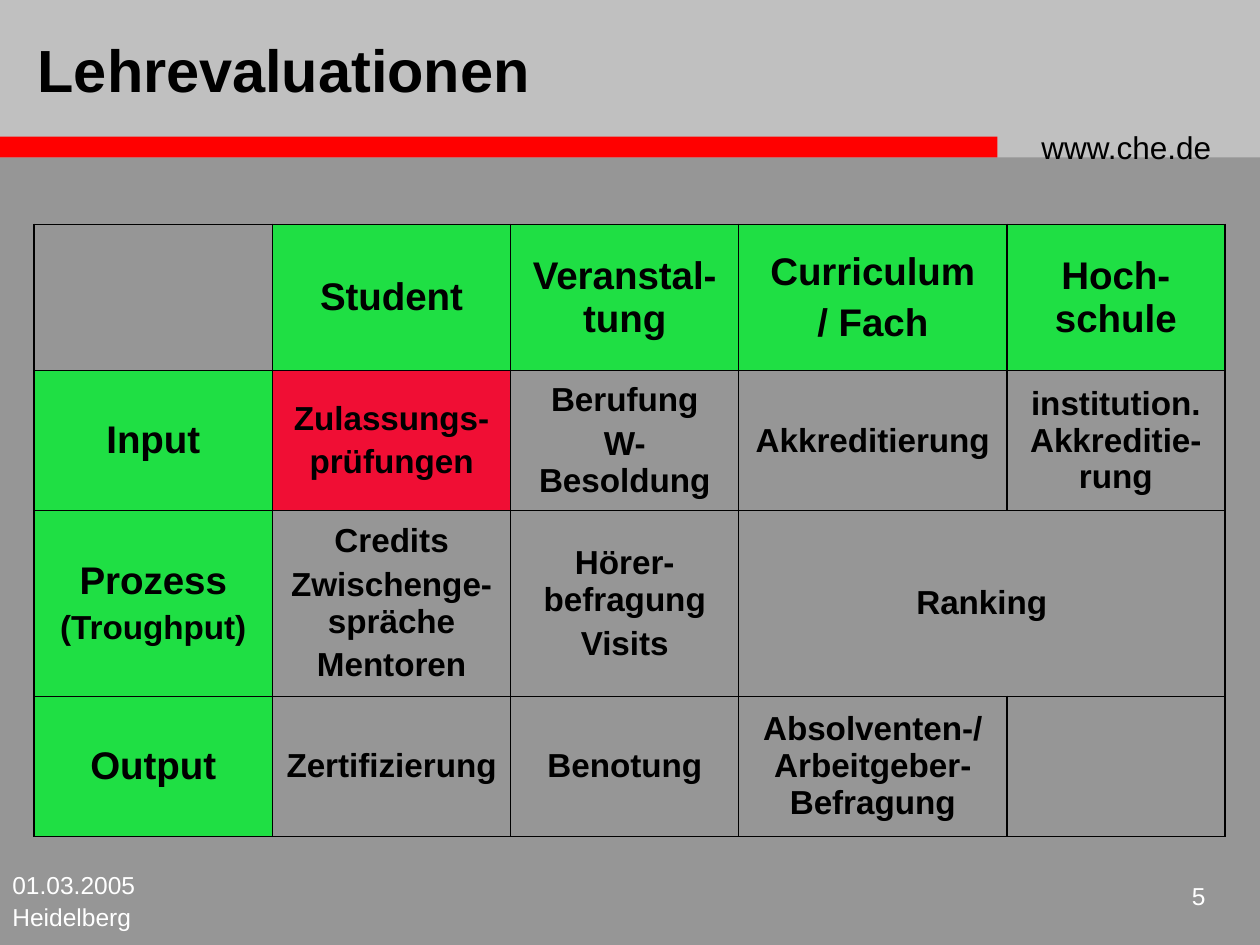
from dataclasses import dataclass
from typing import Optional

from lxml import etree
from pptx import Presentation
from pptx.dml.color import RGBColor
from pptx.enum.shapes import MSO_SHAPE
from pptx.enum.text import MSO_ANCHOR, PP_ALIGN
from pptx.oxml.ns import qn
from pptx.util import Pt

RECT = MSO_SHAPE.RECTANGLE
TOP, MIDDLE = MSO_ANCHOR.TOP, MSO_ANCHOR.MIDDLE
LEFT, CENTER, RIGHT = PP_ALIGN.LEFT, PP_ALIGN.CENTER, PP_ALIGN.RIGHT
BLACK = RGBColor(0x00, 0x00, 0x00)
WHITE = RGBColor(0xFF, 0xFF, 0xFF)
GRAY = RGBColor(0x96, 0x96, 0x96)
SILVER = RGBColor(0xC0, 0xC0, 0xC0)
RED = RGBColor(0xFF, 0x00, 0x00)
GREEN = RGBColor(0x1F, 0xDF, 0x44)
CRIMSON = RGBColor(0xF0, 0x0E, 0x34)
HEAD, BODY = 22, 19


@dataclass
class Bar:
    box: tuple
    fill: RGBColor


@dataclass
class Label:
    text: str
    box: tuple
    size: float
    color: RGBColor = BLACK
    bold: bool = False
    align: PP_ALIGN = LEFT
    anchor: MSO_ANCHOR = TOP
    spacing: float = 1.0


@dataclass
class Cell:
    lines: tuple = ()
    sizes: tuple = (BODY,)
    fill: Optional[RGBColor] = None
    span: int = 1


def head(*lines: str, sizes: tuple = (HEAD,)) -> Cell:
    """Return a green heading cell."""
    return Cell(lines, sizes, GREEN)


def body(*lines: str, **options) -> Cell:
    """Return a body cell."""
    return Cell(lines, **options)


BARS = [
    Bar((0, 0, 720, 90), SILVER),
    Bar((-0.5, 78, 570.5, 12), RED),
]
LABELS = [
    Label("www.che.de", (588, 67.5, 126, 29), 18, spacing=1.1),
    Label("01.03.2005 Heidelberg", (0, 492, 150, 36), 14, WHITE, spacing=1.1),
    Label("5", (654, 498, 42, 30), 14, WHITE, align=RIGHT, spacing=1.1),
    Label("Lehrevaluationen", (14.5, 0, 568, 78), 34, bold=True, anchor=MIDDLE),
]
ORIGIN = (19.5, 128.2)
COLUMNS = [136.2, 136.2, 130.3, 153.2, 124.6]
ROWS = [83.5, 80, 106.2, 80]
GRID = [
    [Cell(), head("Student"), head("Veranstal-tung"),
     head("Curriculum", "/ Fach"), head("Hoch-schule")],
    [head("Input"), body("Zulassungs-", "prüfungen", fill=CRIMSON),
     body("Berufung", "W-Besoldung"), body("Akkreditierung"),
     body("institution. Akkreditie-rung")],
    [head("Prozess", "(Troughput)", sizes=(HEAD, BODY)),
     body("Credits", "Zwischenge-spräche", "Mentoren"),
     body("Hörer-befragung", "Visits"), body("Ranking", span=2)],
    [head("Output"), body("Zertifizierung"), body("Benotung"),
     body("Absolventen-/Arbeitgeber-Befragung"), Cell()],
]


def add_run(p, text: str, size: float, color: RGBColor, bold: bool) -> None:
    """Add a formatted run to a paragraph."""
    r = p.add_run()
    r.text = text
    r.font.color.rgb = color
    for key, value in {"name": "Arial", "size": Pt(size), "bold": bold}.items():
        setattr(r.font, key, value)


def add_bar(s, bar: Bar) -> None:
    """Draw a plain filled band."""
    sp = s.shapes.add_shape(RECT, *map(Pt, bar.box))
    sp.shadow.inherit = False
    sp.fill.solid()
    sp.fill.fore_color.rgb = bar.fill
    sp.line.fill.background()


def add_label(s, label: Label) -> None:
    """Draw a single-paragraph text box."""
    tf = s.shapes.add_textbox(*map(Pt, label.box)).text_frame
    for key, value in {"word_wrap": True, "vertical_anchor": label.anchor}.items():
        setattr(tf, key, value)
    p = tf.paragraphs[0]
    for key, value in {"alignment": label.align, "line_spacing": label.spacing}.items():
        setattr(p, key, value)
    add_run(p, label.text, label.size, label.color, label.bold)


def set_borders(cell) -> None:
    """Give a cell thin black edges ahead of its fill."""
    props = cell._tc.get_or_add_tcPr()
    for i, side in enumerate(("lnL", "lnR", "lnT", "lnB")):
        ln = etree.Element(qn(f"a:{side}"), w=str(Pt(1)))
        fill = etree.SubElement(ln, qn("a:solidFill"))
        etree.SubElement(fill, qn("a:srgbClr"), val=str(BLACK))
        props.insert(i, ln)


def fill_cell(cell, data: Cell) -> None:
    """Write the text and fill of one table cell."""
    cell.vertical_anchor = MIDDLE
    if data.fill is None:
        cell.fill.background()
    else:
        cell.fill.solid()
        cell.fill.fore_color.rgb = data.fill
    tf = cell.text_frame
    for i, text in enumerate(data.lines):
        p = tf.add_paragraph() if i else tf.paragraphs[0]
        size = data.sizes[min(i, len(data.sizes) - 1)]
        p.alignment = CENTER
        if i:
            p.space_before = Pt(0.2 * size)
        add_run(p, text, size, BLACK, True)


def add_matrix(s) -> None:
    """Draw the evaluation table."""
    size = (sum(COLUMNS), sum(ROWS))
    table = s.shapes.add_table(len(ROWS), len(COLUMNS), *map(Pt, ORIGIN + size)).table
    for key in ("first_row", "horz_banding"):
        setattr(table, key, False)
    for column, width in zip(table.columns, COLUMNS):
        column.width = Pt(width)
    for row, height in zip(table.rows, ROWS):
        row.height = Pt(height)
    for i, row in enumerate(GRID):
        for j, data in enumerate(row):
            if data.span > 1:
                table.cell(i, j).merge(table.cell(i, j + data.span - 1))
            fill_cell(table.cell(i, j), data)
    for cell in table.iter_cells():
        if cell.is_spanned:
            cell.fill.background()
        set_borders(cell)


def main() -> None:
    """Build and save the slide."""
    prs = Presentation()
    prs.slide_width, prs.slide_height = Pt(720), Pt(540)
    s = prs.slides.add_slide(prs.slide_layouts[6])
    s.background.fill.solid()
    s.background.fill.fore_color.rgb = GRAY
    for bar in BARS:
        add_bar(s, bar)
    for label in LABELS:
        add_label(s, label)
    add_matrix(s)
    prs.save("out.pptx")


if __name__ == "__main__":
    main()
